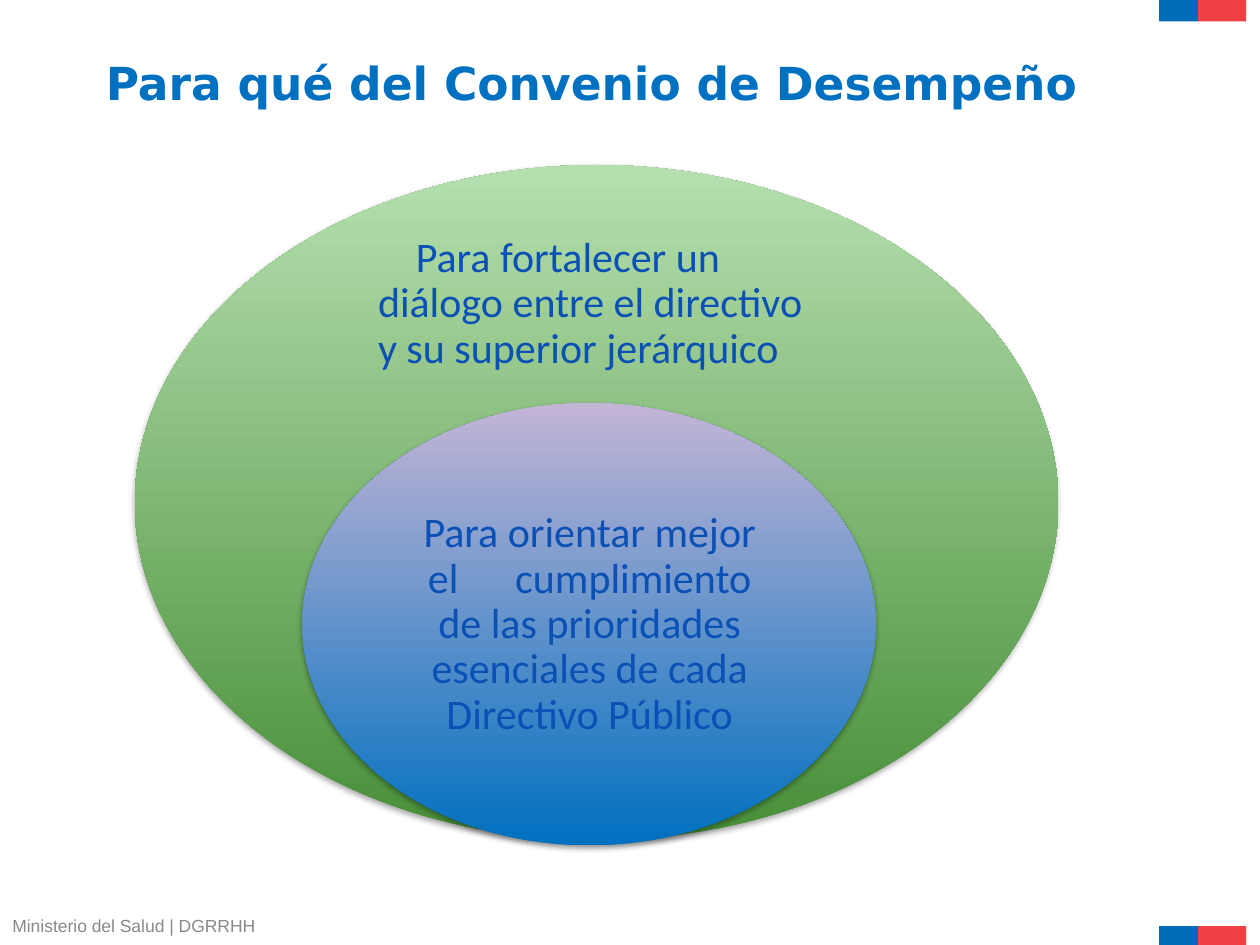
from lxml import etree
from pptx import Presentation
from pptx.dml.color import RGBColor
from pptx.enum.shapes import MSO_SHAPE
from pptx.enum.text import MSO_ANCHOR, PP_ALIGN
from pptx.oxml.ns import qn
from pptx.util import Inches, Pt

RECTANGLE, OVAL = MSO_SHAPE.RECTANGLE, MSO_SHAPE.OVAL
LEFT, CENTER = PP_ALIGN.LEFT, PP_ALIGN.CENTER
MIDDLE = MSO_ANCHOR.MIDDLE

COLORS = {
    "flag_blue": "006CB7", "flag_red": "EF4144", "footer": "898989",
    "title": "0070C0", "text": "0B50B5", "shadow": "000000",
    "green_dark": "488F38", "green_light": "B5DFAF",
    "blue": "0070C0", "lilac": "C3B5D6",
}


def format_text(paragraph, font_name, size, color, bold=False):
    values = {"name": font_name, "size": Pt(size), "bold": bold}
    for run in paragraph.runs:
        for name, value in values.items():
            setattr(run.font, name, value)
        run.font.color.rgb = RGBColor.from_string(COLORS[color])


def add_soft_shadow(shape):
    effects = etree.SubElement(shape._element.spPr, qn("a:effectLst"))
    shadow = etree.SubElement(effects, qn("a:outerShdw"), blurRad=str(Pt(3.1)),
                              dist=str(Pt(1.8)), dir="5400000", rotWithShape="0")
    color = etree.SubElement(shadow, qn("a:srgbClr"), val=COLORS["shadow"])
    etree.SubElement(color, qn("a:alpha"), val="35000")


presentation = Presentation()
presentation.slide_width, presentation.slide_height = Inches(10), Inches(7.5)
slide = presentation.slides.add_slide(presentation.slide_layouts[5])
shapes = slide.shapes

for top in (0, 7.35):
    for left, width, color in ((9.2, 0.31, "flag_blue"), (9.51, 0.38, "flag_red")):
        band = shapes.add_shape(RECTANGLE, Inches(left), Inches(top), Inches(width), Inches(0.17))
        band.shadow.inherit = False
        band.fill.solid()
        band.fill.fore_color.rgb = RGBColor.from_string(COLORS[color])
        band.line.fill.background()

footer = shapes.add_textbox(Inches(0), Inches(7.21), Inches(2.13), Inches(0.27))
footer.text_frame.text = "Ministerio del Salud | DGRRHH"
format_text(footer.text_frame.paragraphs[0], "Arial", 10, "footer")

title = shapes.title
for name, value in {"left": 0.74, "top": 0.38, "width": 8.04, "height": 0.54}.items():
    setattr(title, name, Inches(value))
title.text_frame.text = "Para qué del Convenio de Desempeño"
title.text_frame.word_wrap = False
title.text_frame.vertical_anchor = MIDDLE
title.text_frame.paragraphs[0].alignment = LEFT
format_text(title.text_frame.paragraphs[0], "DejaVu Sans", 26, "title", bold=True)

PURPOSES = [
    {"oval": (1.07, 1.31, 7.33, 5.36), "gradient": ("green_dark", "green_light"),
     "box": (2.81, 1.96, 3.85, 0.91), "alignment": LEFT, "indent": 0.3,
     "runs": ["Para fortalecer un diálogo entre el directivo y su superior jerárquico"]},
    {"oval": (2.4, 3.2, 4.55, 3.51), "gradient": ("blue", "lilac"),
     "box": (3.07, 4.08, 3.22, 1.76), "alignment": CENTER, "indent": 0,
     "runs": ["Para orientar mejor el", " ",
              "cumplimiento de las prioridades esenciales de cada Directivo Público"]},
]

for purpose in PURPOSES:
    oval = shapes.add_shape(OVAL, *map(Inches, purpose["oval"]))
    oval.fill.gradient()
    oval.fill.gradient_angle = 90
    for stop, position, color in zip(oval.fill.gradient_stops, (0, 1), purpose["gradient"]):
        stop.position = position
        stop.color.rgb = RGBColor.from_string(COLORS[color])
    oval.line.fill.background()
    add_soft_shadow(oval)

    frame = shapes.add_textbox(*map(Inches, purpose["box"])).text_frame
    frame.word_wrap = True
    frame.vertical_anchor = MIDDLE
    for side in ("left", "top", "right", "bottom"):
        setattr(frame, f"margin_{side}", Inches(0.19))
    paragraph = frame.paragraphs[0]
    paragraph.alignment = purpose["alignment"]
    paragraph.line_spacing = 0.9
    paragraph._p.get_or_add_pPr().set("indent", str(Inches(purpose["indent"])))
    for text in purpose["runs"]:
        run = paragraph.add_run()
        run.text = text
        if text == " ":
            run.font._element.set("spc", "2700")
    format_text(paragraph, "Calibri", 24, "text")

presentation.save("out.pptx")
